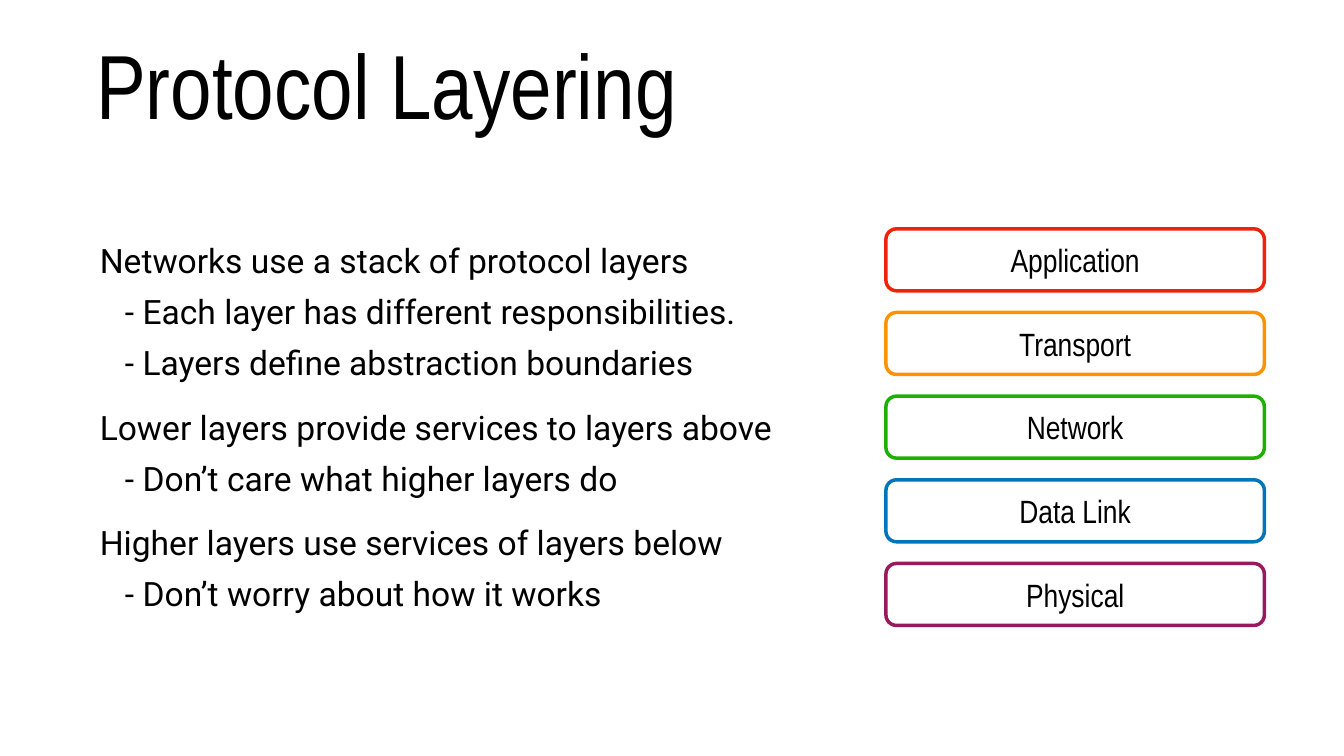
from dataclasses import dataclass

from pptx import Presentation
from pptx.dml.color import RGBColor
from pptx.enum.shapes import MSO_SHAPE
from pptx.enum.text import MSO_ANCHOR, PP_ALIGN
from pptx.util import Inches, Pt

ROUNDED = MSO_SHAPE.ROUNDED_RECTANGLE
MIDDLE = MSO_ANCHOR.MIDDLE
LEFT, CENTER = PP_ALIGN.LEFT, PP_ALIGN.CENTER


@dataclass(frozen=True)
class Theme:
    text: RGBColor = RGBColor(0, 0, 0)
    heading_font: str = "Arial Narrow"
    body_font: str = "Roboto"
    title_size: int = 130
    body_size: int = 48
    layer_size: int = 46
    outline: int = 5
    layers: tuple = ("EE230C", "FE9301", "1EB001", "0076BA", "99195E")


theme = Theme()


def setup_frame(sp, inset):
    tf = sp.text_frame
    tf.word_wrap = True
    tf.vertical_anchor = MIDDLE
    tf.margin_left = tf.margin_right = Inches(inset)
    tf.margin_top = tf.margin_bottom = Inches(inset)
    return tf


def write(p, text, font, size, align=LEFT):
    p.text = text
    p.alignment = align
    p.font.name = font
    p.font.size = Pt(size)
    p.font.color.rgb = theme.text


prs = Presentation()
prs.slide_width, prs.slide_height = Inches(26.67), Inches(15)
s = prs.slides.add_slide(prs.slide_layouts[6])

# Title
sp = s.shapes.add_textbox(Inches(1.85), Inches(0.39), Inches(22.97), Inches(2.5))
tf = setup_frame(sp, 0.06)
write(tf.paragraphs[0], "Protocol Layering", theme.heading_font, theme.title_size)

# Explanation: each point is followed by its details
points = [
    ("Networks use a stack of protocol layers",
     ["Each layer has different responsibilities.",
      "Layers define abstraction boundaries"]),
    ("Lower layers provide services to layers above",
     ["Don’t care what higher layers do"]),
    ("Higher layers use services of layers below",
     ["Don’t worry about how it works"]),
]
sp = s.shapes.add_textbox(Inches(1.92), Inches(4.29), Inches(13.89), Inches(8.36))
tf = setup_frame(sp, 0.06)
for i, (point, details) in enumerate(points):
    p = tf.add_paragraph() if i else tf.paragraphs[0]
    write(p, point, theme.body_font, theme.body_size)
    p.space_before = Pt(35 if i else 24)
    pPr = p._p.get_or_add_pPr()
    pPr.set("marL", str(Inches(0.38)))
    pPr.set("indent", str(Inches(-0.38)))
    for detail in details:
        p = tf.add_paragraph()
        write(p, f"- {detail}", theme.body_font, theme.body_size)
        p.space_before = Pt(15)
        pPr = p._p.get_or_add_pPr()
        pPr.set("marL", str(Inches(0.81)))
        pPr.set("indent", str(Inches(-0.31)))

# Protocol stack
layers = ["Application", "Transport", "Network", "Data Link", "Physical"]
for i, (layer, color) in enumerate(zip(layers, theme.layers)):
    sp = s.shapes.add_shape(ROUNDED, Inches(17.58), Inches(4.54 + 1.66 * i),
                            Inches(7.51), Inches(1.23))
    sp.adjustments[0] = 0.17
    sp.shadow.inherit = False
    sp.fill.background()
    sp.line.color.rgb = RGBColor.from_string(color)
    sp.line.width = Pt(theme.outline)
    tf = setup_frame(sp, 0)
    write(tf.paragraphs[0], layer, theme.heading_font, theme.layer_size, CENTER)

prs.save("out.pptx")
